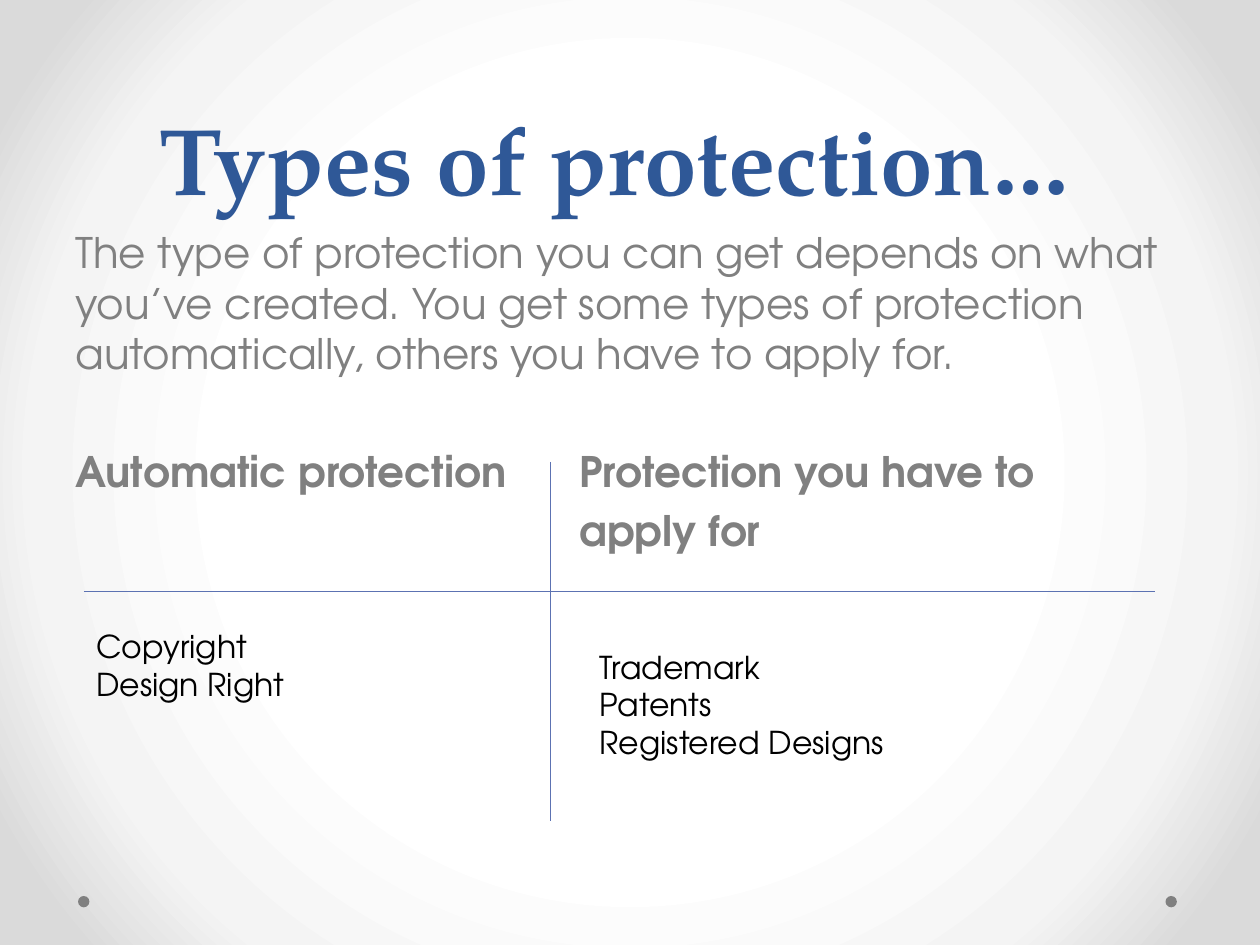
from lxml.etree import SubElement
from pptx import Presentation
from pptx.dml.color import RGBColor
from pptx.enum.shapes import MSO_CONNECTOR, MSO_SHAPE
from pptx.enum.text import MSO_ANCHOR, MSO_AUTO_SIZE, PP_ALIGN
from pptx.oxml import parse_xml
from pptx.oxml.ns import nsdecls, qn
from pptx.util import Pt

SERIF, SANS = "TeX Gyre Pagella", "TeX Gyre Adventor"
BLUE, GREY, BLACK, RULE = "2F5897", "808080", "000000", "5C72B2"
STOPS = [(50, "FFFFFF"), (76, "F4F4F4"), (92, "DADADA")]


def color(text):
    return RGBColor.from_string(text)


class Board:
    """Holds the current slide and draws each kind of element on it."""

    def __init__(self, slide):
        self.slide = slide

    def back(self, stops):
        """Fill the background with a circular gradient from the centre."""
        marks = "".join(
            f'<a:gs pos="{pos * 1000}"><a:srgbClr val="{tone}"/></a:gs>'
            for pos, tone in stops)
        grad = parse_xml(
            f'<a:gradFill {nsdecls("a")} rotWithShape="1"><a:gsLst>{marks}</a:gsLst>'
            '<a:path path="circle"><a:fillToRect l="50000" t="50000" r="50000" '
            'b="50000"/></a:path></a:gradFill>')
        fill = self.slide.background.fill
        fill.gradient()
        old = self.slide.element.find(".//" + qn("a:gradFill"))
        old.getparent().replace(old, grad)

    def put(self, frame, lines, size, tone, font=SANS, bold=False, gap=0):
        """Set the lines as paragraphs of the text frame."""
        frame.word_wrap = True
        frame.auto_size = MSO_AUTO_SIZE.NONE
        for i, line in enumerate(lines):
            para = frame.add_paragraph() if i else frame.paragraphs[0]
            para.space_before, para.space_after = Pt(0), Pt(gap)
            run = para.add_run()
            run.text = line
            run.font.name, run.font.size, run.font.bold = font, Pt(size), bold
            run.font.color.rgb = color(tone)

    def title(self, text, x, y, w, h):
        shape = self.slide.shapes.title
        shape.left, shape.top, shape.width, shape.height = map(Pt, (x, y, w, h))
        frame = shape.text_frame
        frame.vertical_anchor = MSO_ANCHOR.BOTTOM
        self.put(frame, [text], 54, BLUE, SERIF, True)
        para = frame.paragraphs[0]
        para.alignment, para.line_spacing = PP_ALIGN.CENTER, Pt(58)

    def text(self, lines, x, y, w, h, size, tone, **style):
        box = self.slide.shapes.add_textbox(*map(Pt, (x, y, w, h)))
        self.put(box.text_frame, lines, size, tone, **style)

    def line(self, x1, y1, x2, y2):
        rule = self.slide.shapes.add_connector(
            MSO_CONNECTOR.STRAIGHT, *map(Pt, (x1, y1, x2, y2)))
        rule.line.color.rgb, rule.line.width = color(RULE), Pt(0.75)
        SubElement(rule._element.spPr, qn("a:effectLst"))

    def dot(self, x, y, size):
        shape = self.slide.shapes.add_shape(
            MSO_SHAPE.OVAL, *map(Pt, (x, y, size, size)))
        shape.shadow.inherit = False
        shape.fill.solid()
        shape.fill.fore_color.rgb = color(GREY)
        shape.line.fill.background()


def main():
    deck = Presentation()
    deck.slide_width, deck.slide_height = Pt(720), Pt(540)
    board = Board(deck.slides.add_slide(deck.slide_layouts[5]))
    board.back(STOPS)
    for x in (44.6, 666):
        board.dot(x, 512, 6.5)

    board.title("Types of protection…", 28, 0, 648, 126)
    board.text(["The type of protection you can get depends on what you’ve "
                "created. You get some types of protection automatically, "
                "others you have to apply for."],
               36, 126, 648, 96, 24, GREY)

    heads = [(36, 280, ["Automatic protection"]),
             (324, 360, ["Protection you have to", "apply for"])]
    for x, w, lines in heads:
        board.text(lines, x, 251, w, 76, 24, GREY, bold=True, gap=4.8)

    board.line(48, 338, 660, 338)
    board.line(314.5, 264, 314.5, 469)

    lists = [(48, 355, 51, ["Copyright", "Design Right"]),
             (335.5, 366.5, 73, ["Trademark", "Patents", "Registered Designs"])]
    for x, y, h, lines in lists:
        board.text(lines, x, y, 250, h, 18, BLACK)

    deck.save("out.pptx")


if __name__ == "__main__":
    main()
